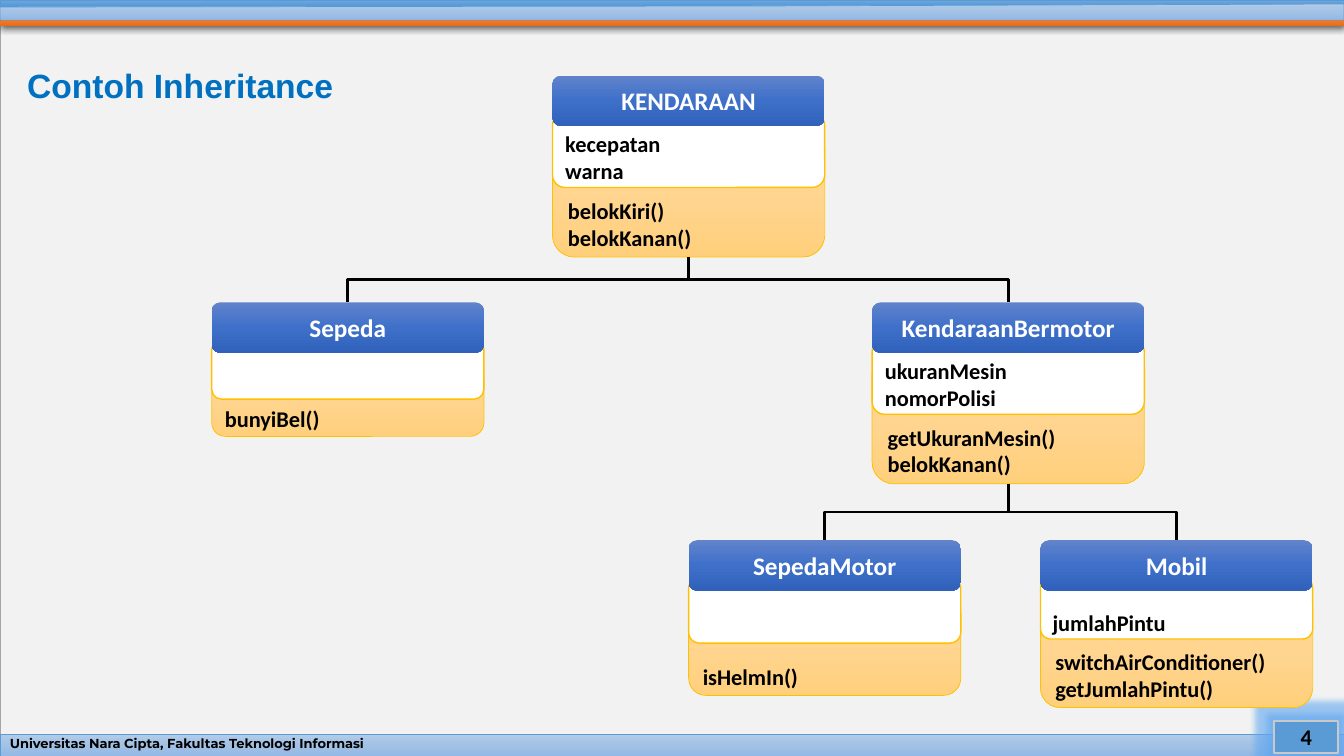
from copy import deepcopy
from dataclasses import dataclass

from lxml import etree
from pptx import Presentation
from pptx.dml.color import RGBColor
from pptx.enum import shapes, text
from pptx.oxml.ns import qn
from pptx.util import Inches, Pt


@dataclass(frozen=True)
class Theme:
    page: str = "F2F2F2"
    page_edge: str = "A5A5A5"
    accent: str = "5B9BD5"
    glow: str = "62A8F0"
    number_edge: str = "C9C9C9"
    title: str = "0070C0"
    ink: str = "000000"
    white: str = "FFFFFF"
    gold: str = "FFC000"
    strip: tuple = ("71A6DB", "559BDB", "448ACA")
    band: tuple = ("B1CBE9", "A3C1E5", "93B9E4")
    orange: tuple = ("F18C57", "F67B28", "E56C19")
    methods: tuple = ("FFDB9E", "FFD590", "FFD07C")
    header: tuple = ("6183CB", "3E70CA", "3062BB")
    title_size: float = 24
    name_size: float = 18
    member_size: float = 16
    footer_size: float = 9.3


THEME = Theme()
SLIDE_W, SLIDE_H = 13.33, 7.5
CLASS_W, HEADER_H = 2.7, 0.5
ATTRIBUTES_TOP, METHODS_TOP = 0.37, 0.5

# name: (left, top, attributes height, total height, attributes, methods)
CLASSES = {
    "KENDARAAN": (5.48, 0.75, 0.74, 1.8, ["kecepatan", "warna"],
                  ["belokKiri()", "belokKanan()"]),
    "Sepeda": (2.1, 3, 0.59, 1.33, [], ["bunyiBel()"]),
    "KendaraanBermotor": (8.65, 3, 0.74, 1.8, ["ukuranMesin", "nomorPolisi"],
                          ["getUkuranMesin()", "belokKanan()"]),
    "SepedaMotor": (6.83, 5.36, 0.65, 1.54, [], ["isHelmIn()"]),
    "Mobil": (10.32, 5.36, 0.61, 1.66, ["jumlahPintu"],
              ["switchAirConditioner()", "getJumlahPintu()"]),
}
INHERITANCE = [
    ("KendaraanBermotor", "SepedaMotor"),
    ("KendaraanBermotor", "Mobil"),
    ("KENDARAAN", "Sepeda"),
    ("KENDARAAN", "KendaraanBermotor"),
]


def rgb(colour):
    return RGBColor.from_string(colour)


def paint(shape, fill, line=None, width=0.5):
    """Fill with one colour, or with a three-stop vertical gradient."""
    shape.shadow.inherit = False
    if isinstance(fill, str):
        shape.fill.solid()
        shape.fill.fore_color.rgb = rgb(fill)
    else:
        shape.fill.gradient()
        shape.fill.gradient_angle = 270
        stop_list = shape._element.spPr.find(qn("a:gradFill")).find(qn("a:gsLst"))
        stop_list.append(deepcopy(stop_list[0]))
        for stop, colour, position in zip(shape.fill.gradient_stops, fill, (0, 0.5, 1)):
            stop.color.rgb = rgb(colour)
            stop.position = position
    if line:
        shape.line.color.rgb = rgb(line)
        shape.line.width = Pt(width)
    else:
        shape.line.fill.background()
    return shape


def add_box(slide, box, fill, line=None, width=0.5, rounded=False):
    kind = shapes.MSO_SHAPE.ROUNDED_RECTANGLE if rounded else shapes.MSO_SHAPE.RECTANGLE
    return paint(slide.shapes.add_shape(kind, *map(Inches, box)), fill, line, width)


def add_outline(slide, points, fill, line=None):
    corners = [(Inches(x), Inches(y)) for x, y in points]
    builder = slide.shapes.build_freeform(*corners[0])
    builder.add_line_segments(corners[1:], close=True)
    return paint(builder.convert_to_shape(), fill, line)


def add_effect(shape, kind, colour, opacity, **settings):
    effects = shape._element.spPr.find(qn("a:effectLst"))
    effect = etree.SubElement(effects, qn(f"a:{kind}"),
                              {key: str(value) for key, value in settings.items()})
    shade = etree.SubElement(effect, qn("a:srgbClr"), val=colour)
    etree.SubElement(shade, qn("a:alpha"), val=str(opacity * 1000))


def write(shape, lines, size, colour=THEME.ink, font="Calibri", align=text.PP_ALIGN.LEFT,
          anchor=text.MSO_ANCHOR.MIDDLE, insets=None, spacing=None):
    frame = shape.text_frame
    frame.word_wrap = True
    frame.vertical_anchor = anchor
    if insets:
        (frame.margin_left, frame.margin_top,
         frame.margin_right, frame.margin_bottom) = map(Inches, insets)
    for index, line in enumerate(lines):
        paragraph = frame.add_paragraph() if index else frame.paragraphs[0]
        paragraph.alignment = align
        if spacing:
            paragraph.line_spacing = spacing
        run = paragraph.add_run()
        run.text = line
        run.font.name, run.font.size, run.font.bold = font, Pt(size), True
        run.font.color.rgb = rgb(colour)


def add_label(slide, box, line, size, **style):
    write(slide.shapes.add_textbox(*map(Inches, box)), [line], size, **style)


def add_frame(slide):
    """Page, top bands, footer and slide number."""
    add_box(slide, (0, 0.04, SLIDE_W, SLIDE_H - 0.04), THEME.page, THEME.page_edge)
    orange_band = add_outline(
        slide, [(SLIDE_W, 0.26), (0, 0.26), (0.03, 0.13), (SLIDE_W, 0.13)], THEME.orange)
    add_effect(orange_band, "outerShdw", THEME.ink, 63,
               blurRad=Pt(4.5), dist=Pt(1.5), dir=5400000, rotWithShape=0)
    footer = (0, 7.29, SLIDE_W, 0.21)
    add_box(slide, footer, THEME.band, THEME.accent)
    add_box(slide, (0, 0, SLIDE_W, 0.11), THEME.strip, THEME.accent)
    add_outline(slide, [(SLIDE_W, 0.2), (0, 0.2), (0, 0.07), (7.5, 0.06), (SLIDE_W, 0.04)],
                THEME.band, THEME.accent)
    add_label(slide, footer, "Universitas Nara Cipta, Fakultas Teknologi Informasi",
              THEME.footer_size, font="Montserrat", spacing=0.7)
    number = add_box(slide, (12.64, 7.15, 0.63, 0.32), THEME.accent, THEME.number_edge, 1.5)
    add_effect(number, "glow", THEME.glow, 60, rad=Pt(9))
    write(number, ["4"], THEME.member_size, align=text.PP_ALIGN.CENTER)


def add_class(slide, name, left, top, attributes_h, total_h, attributes, methods):
    """Draw the three compartments and return (header, methods) for joining."""
    member_style = dict(anchor=text.MSO_ANCHOR.BOTTOM, insets=(0.09, 0, 0, 0))
    methods_box = add_box(
        slide, (left, top + METHODS_TOP, CLASS_W, total_h - METHODS_TOP),
        THEME.methods, THEME.gold, rounded=True)
    write(methods_box, methods, THEME.member_size, **member_style)
    attributes_box = add_box(slide, (left, top + ATTRIBUTES_TOP, CLASS_W, attributes_h),
                             THEME.white, THEME.gold, 1, rounded=True)
    write(attributes_box, attributes, THEME.member_size, **member_style)
    header = add_box(slide, (left, top, CLASS_W, HEADER_H), THEME.header, rounded=True)
    write(header, [name], THEME.name_size, THEME.white, align=text.PP_ALIGN.CENTER)
    return header, methods_box


def add_inheritance(slide, parent, child):
    """Join parent bottom to child top by an elbow that leaves downwards."""
    x1, y1 = parent.left + parent.width // 2, parent.top + parent.height
    x2, y2 = child.left + child.width // 2, child.top
    elbow = slide.shapes.add_connector(shapes.MSO_CONNECTOR.ELBOW, x1, y1, x2, y2)
    elbow.begin_connect(parent, 2)
    elbow.end_connect(child, 0)
    # The elbow preset runs sideways, so its frame is turned a quarter.
    drop, reach = y2 - y1, abs(x2 - x1)
    elbow.left, elbow.top = (x1 + x2 - drop) // 2, (y1 + y2 - reach) // 2
    elbow.width, elbow.height = drop, reach
    to_right = x2 > x1
    turn = elbow._element.spPr.find(qn("a:xfrm"))
    turn.set("rot", str((270 if to_right else 90) * 60000))
    turn.set("flipH", "1" if to_right else "0")
    elbow.line.color.rgb = rgb(THEME.ink)
    elbow.line.width = Pt(2)
    etree.SubElement(elbow._element.spPr, qn("a:effectLst"))


def main():
    deck = Presentation()
    deck.slide_width, deck.slide_height = Inches(SLIDE_W), Inches(SLIDE_H)
    slide = deck.slides.add_slide(deck.slide_layouts[6])
    add_frame(slide)
    add_label(slide, (0.17, 0.53, 12.85, 0.68), "Contoh Inheritance", THEME.title_size,
              colour=THEME.title, font="Arial", spacing=0.9)
    drawn = {name: add_class(slide, name, *details) for name, details in CLASSES.items()}
    for parent, child in INHERITANCE:
        add_inheritance(slide, drawn[parent][1], drawn[child][0])
    deck.save("out.pptx")


if __name__ == "__main__":
    main()
